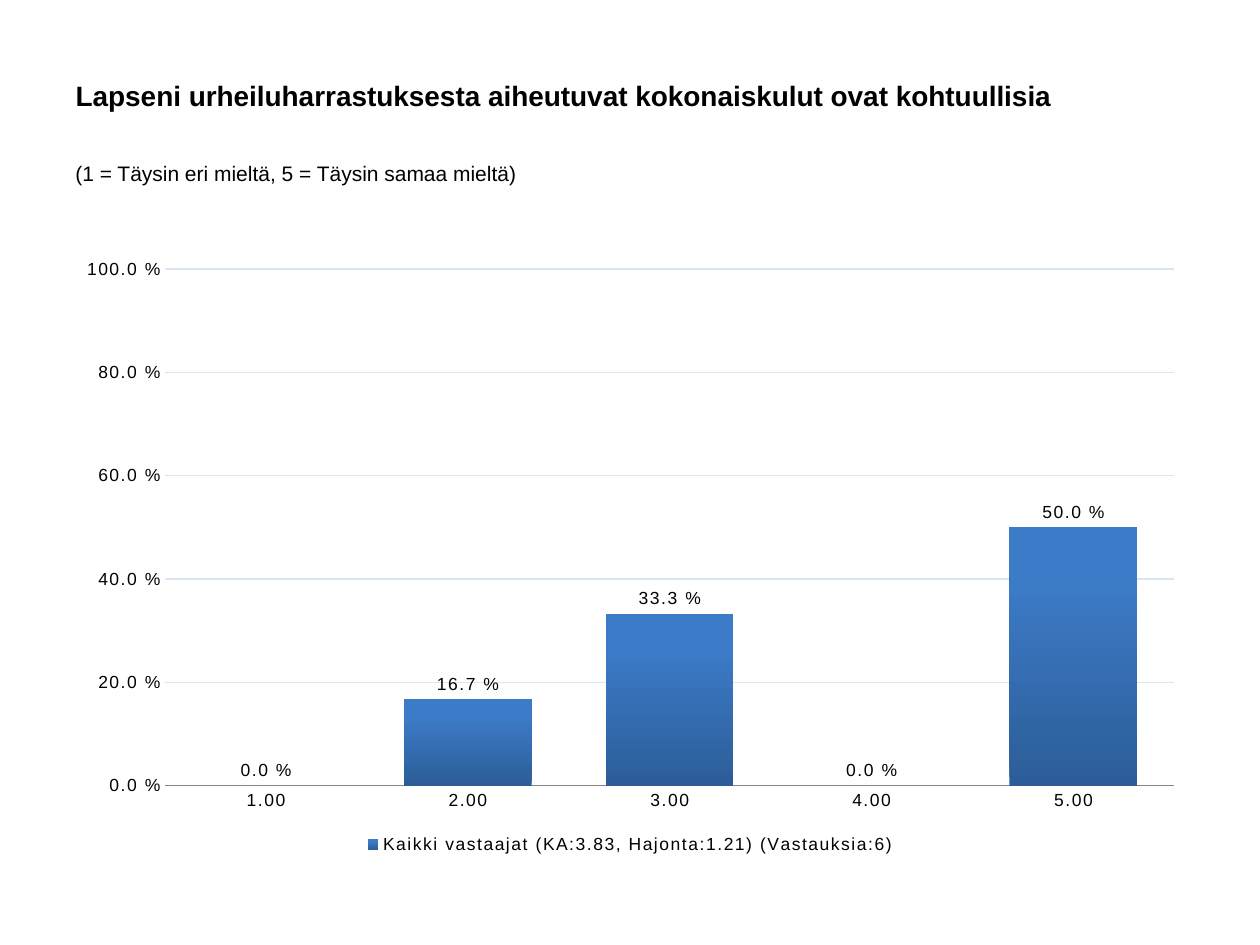
from lxml.etree import SubElement
from pptx import Presentation
from pptx.chart.data import CategoryChartData as Data
from pptx.dml.color import RGBColor
from pptx.enum.chart import XL_CHART_TYPE as Kind
from pptx.enum.chart import XL_LABEL_POSITION as Spot
from pptx.enum.chart import XL_LEGEND_POSITION as Side
from pptx.enum.chart import XL_TICK_MARK as Tick
from pptx.enum.text import MSO_ANCHOR as Anchor
from pptx.enum.text import PP_ALIGN as Align
from pptx.oxml.ns import qn
from pptx.util import Cm, Pt

LEFT, WIDE = 1.27, 22.86
PERCENT = "0.0\\ %"


def color(code):
    return RGBColor.from_string(code)


def assign(item, values):
    for name, value in values.items():
        setattr(item, name, value)


class Deck:
    face = "Arial"
    ink = "000000"
    grid = "DCE6F2"
    axis = "868686"
    bar = (("2C5D98", 0), ("3C7BC7", 0.8))

    def __init__(self):
        self.show = Presentation()
        assign(self.show, {"slide_width": Cm(25.4), "slide_height": Cm(19.05)})
        self.slide = self.show.slides.add_slide(self.show.slide_layouts[5])

    def style(self, font, size, bold=False):
        assign(font, {"name": self.face, "size": Pt(size), "bold": bold})
        font.color.rgb = color(self.ink)

    def label(self, shape, words, size, bold=False):
        para = shape.text_frame.paragraphs[0]
        para.alignment = Align.LEFT
        run = para.add_run()
        run.text = words
        self.style(run.font, size, bold)
        return para

    def title(self, words, top, high):
        shape = self.slide.shapes.title
        assign(shape, {"left": Cm(LEFT), "top": Cm(top),
                       "width": Cm(WIDE), "height": Cm(high)})
        shape.text_frame.vertical_anchor = Anchor.MIDDLE
        self.label(shape, words, 16, True)

    def note(self, words, top, high):
        box = self.slide.shapes.add_textbox(Cm(LEFT), Cm(top), Cm(WIDE), Cm(high))
        box.text_frame.word_wrap = True
        self.label(box, words, 12).space_before = Pt(2.4)

    def chart(self, name, cats, vals, top, high):
        data = Data(number_format=PERCENT)
        data.categories = cats
        data.add_series(name, vals)
        chart = self.slide.shapes.add_chart(
            Kind.COLUMN_CLUSTERED, Cm(LEFT), Cm(top), Cm(WIDE), Cm(high), data).chart
        assign(chart, {"has_title": False, "has_legend": True})
        assign(chart.legend, {"position": Side.BOTTOM, "include_in_layout": False})

        # Axes
        level, base = chart.value_axis, chart.category_axis
        assign(level, {"minimum_scale": 0, "maximum_scale": 1, "major_unit": 0.2,
                       "has_major_gridlines": True})
        for axis in (level, base):
            assign(axis, {"major_tick_mark": Tick.NONE, "minor_tick_mark": Tick.NONE})
        assign(level.tick_labels, {"number_format": PERCENT,
                                   "number_format_is_linked": False})
        level.format.line.fill.background()
        for line, code in ((level.major_gridlines.format.line, self.grid),
                           (base.format.line, self.axis)):
            line.color.rgb = color(code)
            line.width = Pt(0.75)

        # Bars, shaded from the bottom up
        plot = chart.plots[0]
        assign(plot, {"gap_width": 58, "vary_by_categories": False,
                      "has_data_labels": True})
        assign(plot.data_labels, {"show_value": True, "number_format": PERCENT,
                                  "number_format_is_linked": False,
                                  "position": Spot.OUTSIDE_END})
        fill = plot.series[0].format.fill
        fill.gradient()
        fill.gradient_angle = 90
        for stop, (code, place) in zip(fill.gradient_stops, self.bar):
            stop.color.rgb = color(code)
            stop.position = place

        # Text with wide letter spacing
        for part in (chart, chart.legend, level.tick_labels,
                     base.tick_labels, plot.data_labels):
            self.style(part.font, 10)
        root = chart._chartSpace
        for props in root.iter(qn("a:defRPr")):
            props.set("spc", "100")
        self.place(root.find(".//" + qn("c:plotArea")),
                   {"x": 0.09, "y": 0.04, "w": 0.89, "h": 0.84})

    def place(self, area, frame):
        layout = area.find(qn("c:layout"))
        if layout is None:
            layout = SubElement(area, qn("c:layout"))
            area.insert(0, layout)
        manual = SubElement(layout, qn("c:manualLayout"))
        rules = {"layoutTarget": "inner", "xMode": "edge", "yMode": "edge", **frame}
        for tag, value in rules.items():
            SubElement(manual, qn("c:" + tag)).set("val", str(value))


def main():
    deck = Deck()
    # Question and scale
    deck.title("Lapseni urheiluharrastuksesta aiheutuvat kokonaiskulut ovat kohtuullisia",
               0.91, 2.01)
    deck.note("(1 = Täysin eri mieltä, 5 = Täysin samaa mieltä)", 3.12, 1.5)
    # Share of answers
    deck.chart("Kaikki vastaajat (KA:3.83, Hajonta:1.21) (Vastauksia:6)",
               [f"{grade:.2f}" for grade in range(1, 6)],
               (0, 0.167, 0.333, 0, 0.5), 4.93, 12.4)
    deck.show.save("out.pptx")


if __name__ == "__main__":
    main()
